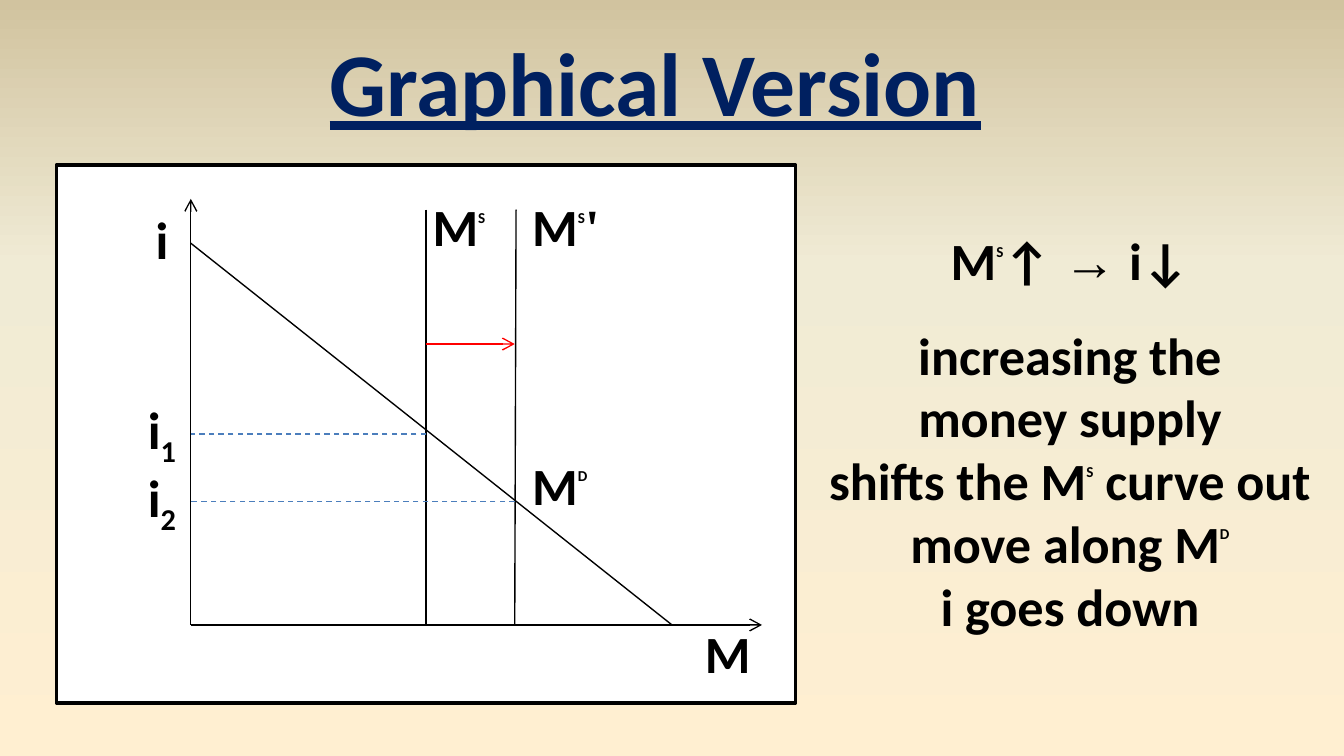
from copy import deepcopy
from pptx import Presentation
from pptx.dml.color import RGBColor
from pptx.enum.dml import MSO_LINE
from pptx.enum.shapes import MSO_CONNECTOR, MSO_SHAPE
from pptx.enum.text import MSO_AUTO_SIZE, PP_ALIGN
from pptx.oxml.ns import qn
from pptx.util import Inches, Pt
from lxml.etree import SubElement


def color(value):
    return RGBColor.from_string(value)


def add_text(shapes, box, paragraphs, size=28, ink="000000", wrap=True):
    shape = shapes.add_textbox(*[Inches(value) for value in box])
    frame = shape.text_frame
    frame.word_wrap = wrap
    frame.auto_size = MSO_AUTO_SIZE.SHAPE_TO_FIT_TEXT
    for index, runs in enumerate(paragraphs):
        paragraph = frame.paragraphs[0] if index == 0 else frame.add_paragraph()
        paragraph.alignment = PP_ALIGN.CENTER
        for text, style in runs:
            run = paragraph.add_run()
            run.text = text
            font = run.font
            font.name = "Times New Roman" if style == "serif" else "Calibri"
            font.size = Pt(14 if style == "super" else size)
            font.bold = True
            font.color.rgb = color(ink)
            if style in ("super", "sub"):
                baseline = "90000" if style == "super" else "-25000"
                run._r.get_or_add_rPr().set("baseline", baseline)
    return frame


presentation = Presentation()
presentation.slide_width = Inches(10)
presentation.slide_height = Inches(10 * 9 / 16)
slide = presentation.slides.add_slide(presentation.slide_layouts[6])

background = slide.background.fill
background.gradient()
background.gradient_angle = 90
stop_list = slide._element.find(".//" + qn("a:gsLst"))
stop_list.append(deepcopy(stop_list[-1]))
gradient = [(0, "FFEFD1"), (0.65, "F0EBD5"), (1, "D1C39F")]
for stop, (position, tint) in zip(background.gradient_stops, gradient):
    stop.position = position
    stop.color.rgb = color(tint)

title = add_text(slide.shapes, (2.33, 0.15, 5.09, 0.91),
                 [[("Graphical Version", "")]], 48, "002060", False)
title.paragraphs[0].runs[0].font.underline = True

explanation = add_text(slide.shapes, (5.92, 1.65, 4.08, 3.16), [
    [("M", ""), ("S", "super"), ("↑", ""), (" → ", "serif"), ("i↓", "")],
    [("increasing the", "")],
    [("money supply", "")],
    [("shifts the M", ""), ("S", "super"), (" curve out", "")],
    [("move along M", ""), ("D", "super")],
    [("i goes down", "")],
])
explanation.paragraphs[0].space_after = Pt(17)

graph = slide.shapes.add_group_shape().shapes
panel = graph.add_shape(MSO_SHAPE.RECTANGLE, Inches(0.42), Inches(1.23),
                        Inches(5.5), Inches(4))
panel.shadow.inherit = False
panel.fill.solid()
panel.fill.fore_color.rgb = color("FFFFFF")
panel.line.color.rgb = color("000000")
panel.line.width = Pt(2)

axis_x, axis_y = 1.42, 4.65
supply, new_supply = 3.17, 3.83
lines = [
    (supply, 1.56, supply, axis_y, "000000", ""),
    (axis_x, 1.81, 5, axis_y, "000000", ""),
    (axis_x, axis_y, axis_x, 1.48, "000000", "arrow"),
    (axis_x, axis_y, 5.67, axis_y, "000000", "arrow"),
    (3.84, 1.56, new_supply, axis_y, "000000", ""),
    (supply, 3.23, axis_x, 3.23, "4B7EBC", "dash"),
    (new_supply, 3.73, axis_x, 3.73, "4B7EBC", "dash"),
    (supply, 2.56, new_supply, 2.56, "FF0000", "arrow"),
]
for *ends, ink, style in lines:
    connector = graph.add_connector(MSO_CONNECTOR.STRAIGHT,
                                    *[Inches(value) for value in ends])
    connector.line.color.rgb = color(ink)
    connector.line.width = Pt(0.75)
    if style == "dash":
        connector.line.dash_style = MSO_LINE.DASH
    if style == "arrow":
        SubElement(connector.line._get_or_add_ln(), qn("a:tailEnd"), type="arrow")
    SubElement(connector._element.spPr, qn("a:effectLst"))

labels = [
    (3.83, 3.32, 0.67, [("M", ""), ("D", "super")]),
    (3.08, 1.4, 0.67, [("M", ""), ("S", "super")]),
    (0.83, 1.49, 0.75, [("i", "")]),
    (5.08, 4.57, 0.67, [("M", "")]),
    (3.75, 1.4, 0.92, [("M", ""), ("S", "super"), ("'", "serif")]),
    (0.83, 2.91, 0.75, [("i", ""), ("1", "sub")]),
    (0.83, 3.41, 0.75, [("i", ""), ("2", "sub")]),
]
for left, top, width, runs in labels:
    add_text(graph, (left, top, width, 0.57), [runs])

presentation.save("out.pptx")
